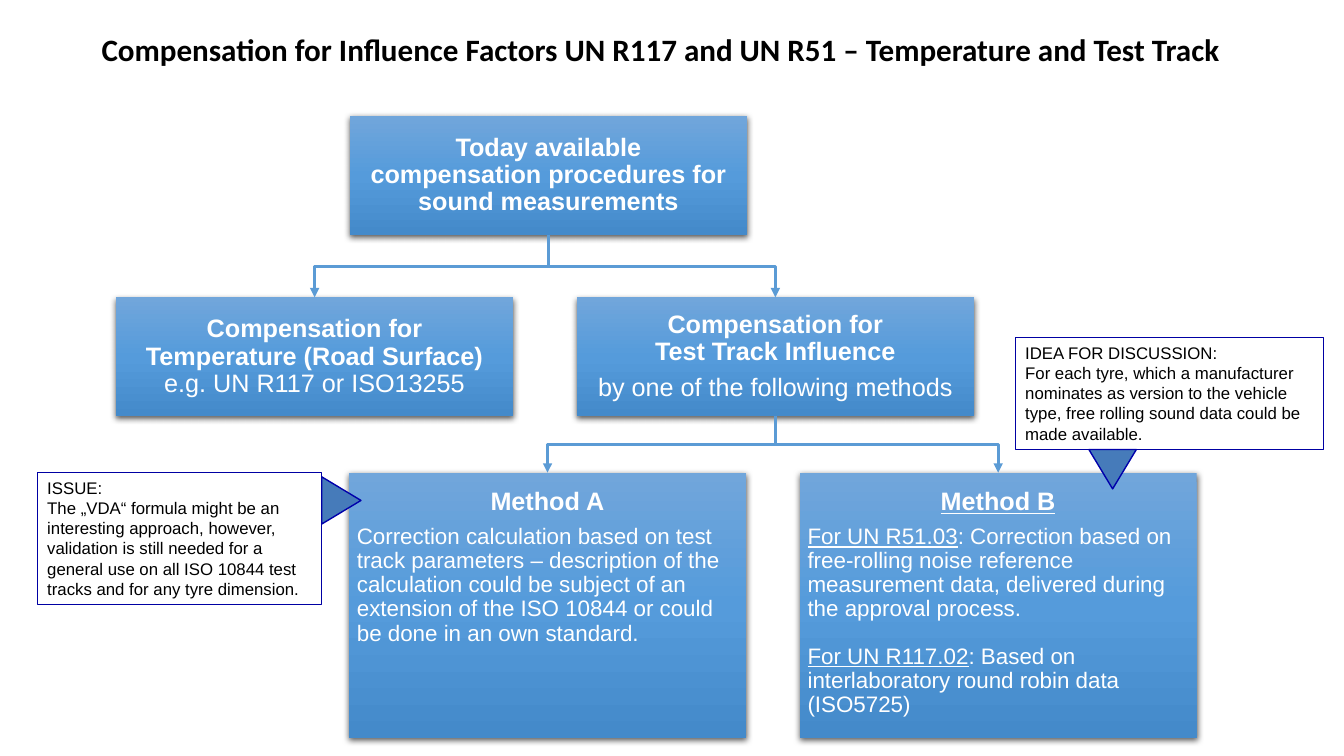
from copy import deepcopy

from lxml import etree
from pptx import Presentation
from pptx import util as u
from pptx.dml.color import RGBColor
from pptx.enum import shapes, text
from pptx.oxml import ns

COLOURS = {
    "ink": "000000", "paper": "FFFFFF", "connector": "5B9BD5",
    "box_top": "71A6DB", "box_middle": "559BDB", "box_bottom": "448ACA",
    "pointer": "467BBA", "pointer_edge": "0000AB", "callout_edge": "0000A3",
}
SCALE = 9144  # EMU per px, 100 px to the inch
BOX_W, BOX_H, METHOD_H = 394, 118, 263
POINTER_W, POINTER_H = 47, 39
CENTRE, LEFT = text.PP_ALIGN.CENTER, text.PP_ALIGN.LEFT

# Run formats
TITLE = {"name": "Calibri", "size": u.Pt(22.2), "bold": True}
HEADING = {"name": "Arial", "size": u.Pt(18), "bold": True}
HEADING_LINK = {**HEADING, "underline": True}
SUBHEADING = {**HEADING, "bold": False}
BODY = {**SUBHEADING, "size": u.Pt(16)}
BODY_LINK = {**BODY, "underline": True}
NOTE = {**SUBHEADING, "size": u.Pt(12)}

# Paragraph formats
PLAIN = {"alignment": LEFT}
TITLE_LINE = {"alignment": CENTRE, "line_spacing": 0.9}
CENTRED = {**TITLE_LINE, "space_after": u.Pt(6.5)}
FLOWING = {**CENTRED, "alignment": LEFT}
SECTION = {**FLOWING, "space_after": u.Pt(16.5)}


def px(*lengths):
    return [u.Emu(round(length * SCALE)) for length in lengths]


def colour(name):
    return RGBColor.from_string(COLOURS[name])


def apply(target, formats):
    for name, value in formats.items():
        setattr(target, name, value)


class FlowSlide:
    def __init__(self, deck):
        self.shapes = deck.slides.add_slide(deck.slide_layouts[6]).shapes

    def fill_text(self, shape, paragraphs, ink, **frame_formats):
        frame = shape.text_frame
        apply(frame, {"word_wrap": True, **frame_formats})
        for index, (layout, runs) in enumerate(paragraphs):
            paragraph = frame.paragraphs[0] if index == 0 else frame.add_paragraph()
            apply(paragraph, layout)
            for words, formats in runs:
                for row, line in enumerate(words.split("\n")):
                    if row:
                        paragraph.add_line_break()
                    if line:
                        run = paragraph.add_run()
                        run.text = line
                        apply(run.font, formats)
                        run.font.color.rgb = colour(ink)

    def title(self, x, y, w, h, words):
        box = self.shapes.add_textbox(*px(x, y, w, h))
        self.fill_text(box, [(TITLE_LINE, [(words, TITLE)])], "ink",
                       vertical_anchor=text.MSO_ANCHOR.MIDDLE)

    def shape(self, preset, x, y, w, h):
        shape = self.shapes.add_shape(preset, *px(x, y, w, h))
        shape.shadow.inherit = False
        return shape

    def box(self, x, y, h, paragraphs, anchor=text.MSO_ANCHOR.MIDDLE, top=8):
        box = self.shape(shapes.MSO_SHAPE.RECTANGLE, x, y, BOX_W, h)
        box.line.fill.background()
        properties = box._element.spPr
        # Three-stop vertical gradient
        box.fill.gradient()
        box.fill.gradient_angle = 270
        stops = properties.find(".//" + ns.qn("a:gsLst"))
        stops.insert(1, deepcopy(stops[0]))
        for stop, position, name in zip(box.fill.gradient_stops, (0, 0.5, 1),
                                        ("box_top", "box_middle", "box_bottom")):
            stop.position = position
            stop.color.rgb = colour(name)
        # Soft shadow below the box
        shadow = etree.SubElement(
            properties.find(ns.qn("a:effectLst")), ns.qn("a:outerShdw"),
            blurRad=str(u.Pt(4.5)), dist=str(u.Pt(1.5)), dir="5400000", rotWithShape="0")
        tint = etree.SubElement(shadow, ns.qn("a:srgbClr"), val=COLOURS["ink"])
        etree.SubElement(tint, ns.qn("a:alpha"), val="63000")
        side, upper = px(8, top)
        self.fill_text(box, paragraphs, "paper", vertical_anchor=anchor, margin_left=side,
                       margin_right=side, margin_bottom=side, margin_top=upper)
        return box

    def branch(self, parent, child):
        start_x, start_y = parent.left + parent.width // 2, parent.top + parent.height
        end_x, end_y = child.left + child.width // 2, child.top
        line = self.shapes.add_connector(
            shapes.MSO_CONNECTOR.ELBOW, start_x, start_y, end_x, end_y)
        line.begin_connect(parent, 2)
        line.end_connect(child, 0)
        # Turn the elbow so that it leaves downwards
        drop, reach = end_y - start_y, abs(end_x - start_x)
        apply(line, {"left": (start_x + end_x - drop) // 2,
                     "top": (start_y + end_y - reach) // 2,
                     "width": drop, "height": reach})
        rightwards = end_x > start_x
        frame = line._element.spPr.find(ns.qn("a:xfrm"))
        frame.set("rot", str((270 if rightwards else 90) * 60000))
        frame.set("flipH", "1" if rightwards else "0")
        line.line.color.rgb = colour("connector")
        line.line.width = u.Pt(2.25)
        etree.SubElement(line.line._get_or_add_ln(), ns.qn("a:tailEnd"), type="triangle")
        etree.SubElement(line._element.spPr, ns.qn("a:effectLst"))

    def outline(self, shape, fill, edge):
        shape.fill.solid()
        shape.fill.fore_color.rgb = colour(fill)
        shape.line.color.rgb = colour(edge)
        shape.line.width = u.Pt(1)

    def callout(self, x, y, w, h, heading, words):
        note = self.shape(shapes.MSO_SHAPE.RECTANGLE, x, y, w, h)
        self.outline(note, "paper", "callout_edge")
        self.fill_text(note, [(PLAIN, [(line, NOTE)]) for line in (heading, words)], "ink",
                       vertical_anchor=text.MSO_ANCHOR.TOP)

    def pointer(self, x, y, rotation):
        tip = self.shape(shapes.MSO_SHAPE.ISOSCELES_TRIANGLE, x, y, POINTER_W, POINTER_H)
        tip.rotation = rotation
        self.outline(tip, "pointer", "pointer_edge")


def main():
    deck = Presentation()
    deck.slide_width, deck.slide_height = u.Inches(13.33), u.Inches(7.5)
    slide = FlowSlide(deck)
    slide.title(68, 26, 1175, 50, "Compensation for Influence Factors UN R117 and "
                "UN R51 – Temperature and Test Track")

    # Procedure tree
    procedures = slide.box(347, 115, BOX_H, [(CENTRED, [
        ("Today available\ncompensation procedures for sound measurements", HEADING)])])
    temperature = slide.box(115, 295, BOX_H, [(CENTRED, [
        ("Compensation for\nTemperature (Road Surface)\n", HEADING),
        ("e.g. UN R117 or ISO13255", SUBHEADING)])])
    test_track = slide.box(572, 295, BOX_H, [
        (CENTRED, [("Compensation for\nTest Track Influence", HEADING)]),
        (CENTRED, [("by one of the following methods", SUBHEADING)])])
    method_a = slide.box(346, 469, METHOD_H, [
        (CENTRED, [("Method A", HEADING)]),
        (FLOWING, [("Correction calculation based on test track parameters – description "
                    "of the calculation could be subject of an extension of the ISO 10844 "
                    "or could be done in an own standard.", BODY)]),
    ], text.MSO_ANCHOR.TOP, 16)
    method_b = slide.box(793, 469, METHOD_H, [
        (CENTRED, [("Method B", HEADING_LINK)]),
        (SECTION, [("For UN R51.03", BODY_LINK),
                   (": Correction based on free-rolling noise reference measurement data, "
                    "delivered during the approval process.", BODY)]),
        (FLOWING, [("For UN R117.02", BODY_LINK),
                   (": Based on interlaboratory round robin data (ISO5725)", BODY)]),
    ], text.MSO_ANCHOR.TOP, 16)

    # Branches
    for parent, child in ((procedures, test_track), (procedures, temperature),
                          (test_track, method_a), (test_track, method_b)):
        slide.branch(parent, child)

    # Callouts with their pointers
    slide.pointer(315, 477, 90)
    slide.callout(37, 469, 282, 131, "ISSUE:",
                  "The „VDA“ formula might be an interesting approach, however, validation is "
                  "still needed for a general use on all ISO 10844 test tracks and for any "
                  "tyre dimension.")
    slide.callout(1007, 335, 306, 111, "IDEA FOR DISCUSSION:",
                  "For each tyre, which a manufacturer nominates as version to the vehicle "
                  "type, free rolling sound data could be made available.")
    slide.pointer(1080, 446, 180)
    deck.save("out.pptx")


if __name__ == "__main__":
    main()
